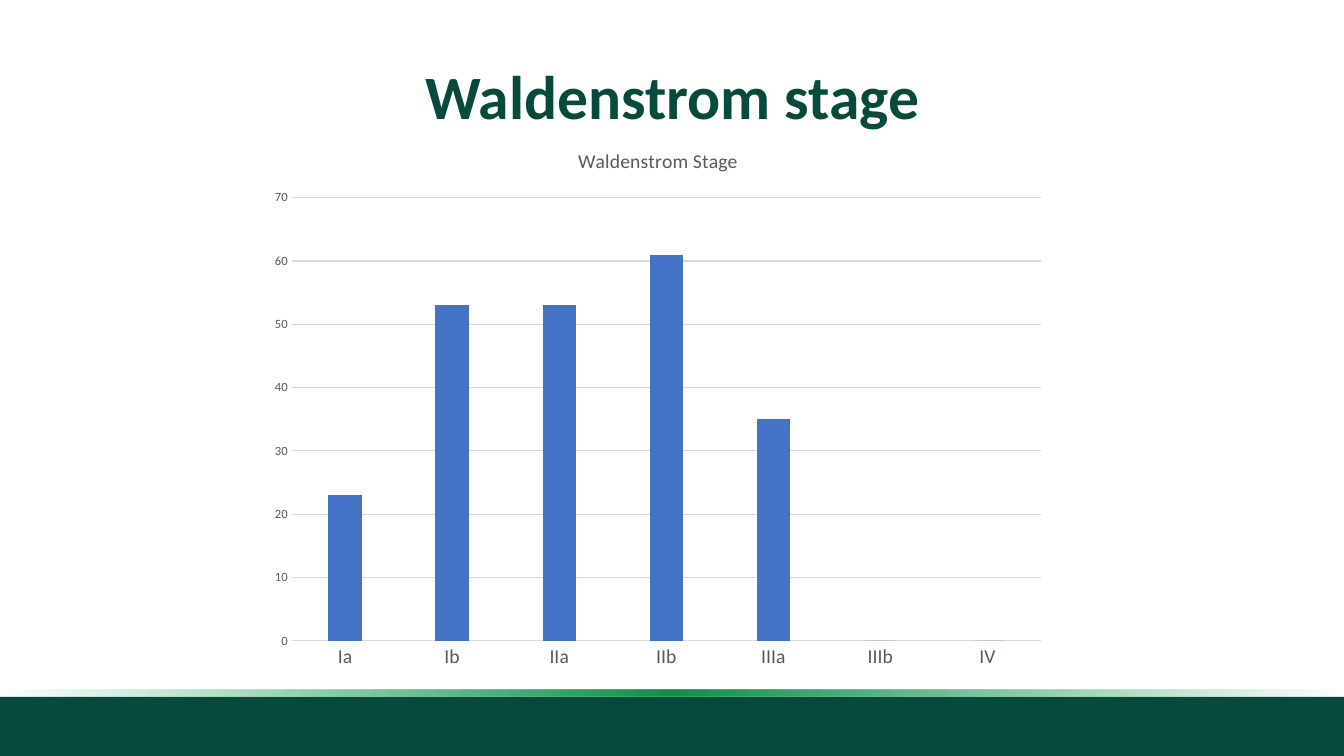
from lxml import etree
from pptx import Presentation
from pptx import util as u
from pptx.chart import data
from pptx.dml.color import RGBColor
from pptx.enum import chart as ch, shapes, text
from pptx.oxml.ns import qn

HEADING = "Waldenstrom stage"
CHART_TITLE = "Waldenstrom Stage"
STAGES = {"Ia": 23, "Ib": 53, "IIa": 53, "IIb": 61, "IIIa": 35, "IIIb": 0, "IV": 0}
GLOW = [(0, "0D9D4F", 0), (50, "0C9049", 100), (100, "0FAB56", 0)]
GREEN, BLUE, GREY, RULE = "07493C", "4472C4", "595959", "D9D9D9"
FONT = "Calibri"
BAND_BOX = (0, 697, 1344, 59)
GLOW_BOX = (0, 690, 1344, 6)
HEADING_BOX = (93, 40, 1159, 120)
CHART_BOX = (259, 127, 798, 553)
PX = 914400 / 100.8


def box(lengths):
    return [u.Emu(round(length * PX)) for length in lengths]


def color(value):
    return RGBColor.from_string(value)


def style(font, size, value, bold=False):
    font.name, font.size, font.bold = FONT, u.Pt(size), bold
    font.color.rgb = color(value)


def rule(line):
    line.color.rgb = color(RULE)
    line.width = u.Pt(0.75)


def bar(slide, lengths):
    strip = slide.shapes.add_shape(shapes.MSO_SHAPE.RECTANGLE, *box(lengths))
    strip.shadow.inherit = False
    strip.line.fill.background()
    return strip


def add_footer(slide):
    band = bar(slide, BAND_BOX)
    band.fill.solid()
    band.fill.fore_color.rgb = color(GREEN)
    glow = bar(slide, GLOW_BOX)
    glow.fill.gradient()
    glow.fill.gradient_angle = 180
    stops = glow._element.spPr.find(".//" + qn("a:gsLst"))
    for stop in list(stops):
        stops.remove(stop)
    for position, value, opacity in GLOW:
        stop = etree.SubElement(stops, qn("a:gs"), pos=str(position * 1000))
        tint = etree.SubElement(stop, qn("a:srgbClr"), val=value)
        etree.SubElement(tint, qn("a:alpha"), val=str(opacity * 1000))


def add_heading(slide):
    heading = slide.shapes.title
    heading.left, heading.top, heading.width, heading.height = box(HEADING_BOX)
    frame = heading.text_frame
    frame.text = HEADING
    frame.vertical_anchor = text.MSO_ANCHOR.MIDDLE
    line = frame.paragraphs[0]
    line.alignment = text.PP_ALIGN.CENTER
    line.line_spacing = 0.9
    style(line.runs[0].font, 44, GREEN, True)


def add_stage_chart(slide):
    counts = data.CategoryChartData()
    counts.categories = list(STAGES)
    counts.add_series("Series 1", list(STAGES.values()))
    chart = slide.shapes.add_chart(
        ch.XL_CHART_TYPE.COLUMN_CLUSTERED, *box(CHART_BOX), counts).chart
    style(chart.font, 10, "000000")
    chart.has_legend = False
    chart.has_title = True
    caption = chart.chart_title
    caption.include_in_layout = False
    caption.text_frame.text = CHART_TITLE
    style(caption.text_frame.paragraphs[0].runs[0].font, 14, GREY)

    columns = chart.plots[0]
    columns.gap_width, columns.overlap = 219, -27
    columns.vary_by_categories = False
    fill = columns.series[0].format.fill
    fill.solid()
    fill.fore_color.rgb = color(BLUE)

    for axis, size in ((chart.category_axis, 14), (chart.value_axis, 9)):
        axis.major_tick_mark = axis.minor_tick_mark = ch.XL_TICK_MARK.NONE
        style(axis.tick_labels.font, size, GREY)
    rule(chart.category_axis.format.line)
    counts_axis = chart.value_axis
    counts_axis.minimum_scale, counts_axis.maximum_scale = 0, 70
    counts_axis.major_unit = 10
    counts_axis.format.line.fill.background()
    rule(counts_axis.major_gridlines.format.line)


def main():
    deck = Presentation()
    deck.slide_width, deck.slide_height = box((1344, 756))
    slide = deck.slides.add_slide(deck.slide_layouts[5])
    add_footer(slide)
    add_heading(slide)
    add_stage_chart(slide)
    deck.save("out.pptx")


if __name__ == "__main__":
    main()
